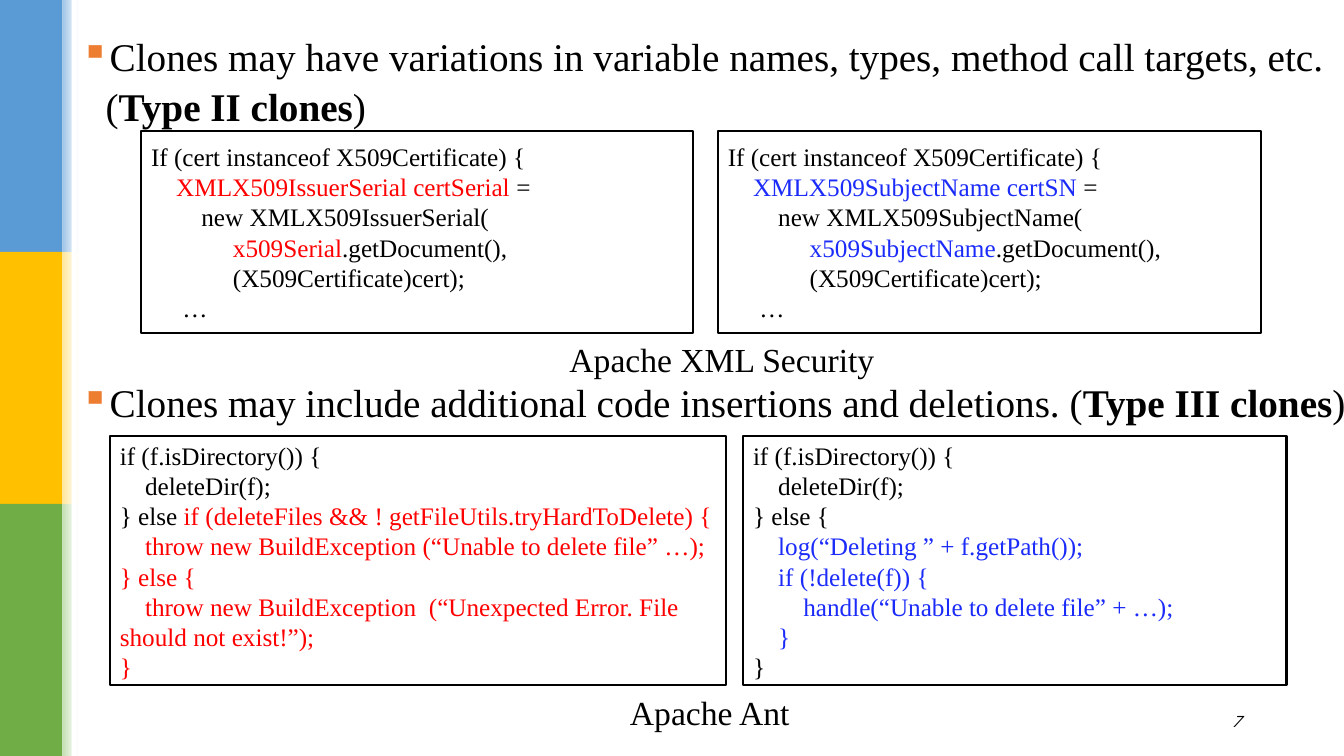
from dataclasses import dataclass

from lxml import etree
from pptx import Presentation
from pptx.dml.color import RGBColor as RGB
from pptx.enum.shapes import MSO_SHAPE as SHAPE
from pptx.enum.text import MSO_ANCHOR as ANCHOR, PP_ALIGN as ALIGN
from pptx.oxml.ns import qn
from pptx.util import Inches, Pt


@dataclass(frozen=True)
class Theme:
    font: str = "Times New Roman"
    number_font: str = "League Spartan"
    black: str = "000000"
    white: str = "FFFFFF"
    red: str = "FF0000"
    blue: str = "1B2BF9"
    bullet: str = "ED7D31"
    # Solid colour and its lighter edge, from top to bottom
    bands: tuple = (("5B9BD5", "9DC3E6"), ("FFC000", "FFE699"),
                    ("70AD47", "C5E0B4"))
    point_size: int = 28
    caption_size: int = 24
    code_size: int = 18
    number_size: int = 12


T = Theme()
RED, BLUE = T.red, T.blue

# Each code line is a list of runs: plain text, or (text, colour)
XML_ISSUER = [
    ["If (cert instanceof X509Certificate) {"],
    ["    ", ("XMLX509IssuerSerial certSerial", RED), " ="],
    ["        new XMLX509IssuerSerial("],
    ["             ", ("x509Serial", RED), ".getDocument(),"],
    ["             (X509Certificate)cert);"],
    ["     …"],
]
XML_SUBJECT = [
    ["If (cert instanceof X509Certificate) {"],
    ["    ", ("XMLX509SubjectName certSN", BLUE), " ="],
    ["        new XMLX509SubjectName("],
    ["             ", ("x509SubjectName", BLUE), ".getDocument(),"],
    ["             (X509Certificate)cert);"],
    ["     …"],
]
ANT_THROW = [
    ["if (f.isDirectory()) {"],
    ["    deleteDir(f);"],
    ["} else",
     (" if (deleteFiles && ! getFileUtils.tryHardToDelete) {", RED)],
    [("    throw new BuildException (“Unable to delete file” …);", RED)],
    [("} else {", RED)],
    [("    throw new BuildException  (“Unexpected Error. File "
      "should not exist!”);", RED)],
    [("}", RED)],
]
ANT_LOG = [
    ["if (f.isDirectory()) {"],
    ["    deleteDir(f);"],
    ["} else {"],
    ["    ", ("log(“Deleting ” + f.getPath());", BLUE)],
    ["    ", ("if (!delete(f)) {", BLUE)],
    [("        handle(“Unable to delete file” + …);", BLUE)],
    [("    }", BLUE)],
    ["}"],
]


def add_run(p, text, size, color=T.black, bold=False):
    r = p.add_run()
    r.text = text
    r.font.name, r.font.size, r.font.bold = T.font, Pt(size), bold
    r.font.color.rgb = RGB.from_string(color)


def add_rect(slide, x, y, w, h, fill):
    sp = slide.shapes.add_shape(SHAPE.RECTANGLE, Inches(x), Inches(y),
                                Inches(w), Inches(h))
    sp.shadow.inherit = False
    sp.fill.solid()
    sp.fill.fore_color.rgb = RGB.from_string(fill)
    sp.line.fill.background()
    return sp


def add_text_frame(slide, x, y, w, h):
    tf = slide.shapes.add_textbox(Inches(x), Inches(y),
                                  Inches(w), Inches(h)).text_frame
    tf.word_wrap = True
    return tf


def add_side_bands(slide):
    height = 2.5
    for i, (color, edge) in enumerate(T.bands):
        add_rect(slide, 0, i * height, 0.62, height, color)
        fade = add_rect(slide, 0.62, i * height, 0.16, height, edge)
        fade.fill.gradient()
        fade.fill.gradient_angle = 0
        for stop, shade in zip(fade.fill.gradient_stops, (edge, T.white)):
            stop.color.rgb = RGB.from_string(shade)
    add_rect(slide, 0.71, 0, 0.05, 7.5, T.white)


def add_point(slide, y, text, clone_type):
    p = add_text_frame(slide, 0.7, y, 12.92, 1.25).paragraphs[0]
    p.line_spacing = 1.05
    pPr = p._p.get_or_add_pPr()
    pPr.set("marL", str(Inches(0.25)))
    pPr.set("indent", str(-Inches(0.25)))
    color = etree.SubElement(pPr, qn("a:buClr"))
    etree.SubElement(color, qn("a:srgbClr"), val=T.bullet)
    etree.SubElement(pPr, qn("a:buChar"), char="▪")
    add_run(p, text + " (", T.point_size)
    add_run(p, clone_type, T.point_size, bold=True)
    add_run(p, ")", T.point_size)


def add_code_box(slide, x, y, w, h, lines):
    sp = add_rect(slide, x, y, w, h, T.white)
    sp.line.color.rgb = RGB.from_string(T.black)
    sp.line.width = Pt(1.5)
    tf = sp.text_frame
    tf.word_wrap = True
    tf.vertical_anchor = ANCHOR.MIDDLE
    for i, line in enumerate(lines):
        p = tf.add_paragraph() if i else tf.paragraphs[0]
        p.alignment = ALIGN.LEFT
        for part in line:
            text, color = (part, T.black) if isinstance(part, str) else part
            add_run(p, text, T.code_size, color)


def add_caption(slide, x, y, w, text):
    p = add_text_frame(slide, x, y, w, 0.5).paragraphs[0]
    add_run(p, text, T.caption_size)


def add_slide_number(slide, number):
    tf = add_text_frame(slide, 8.83, 6.95, 3.58, 0.4)
    tf.vertical_anchor = ANCHOR.MIDDLE
    p = tf.paragraphs[0]
    p.alignment = ALIGN.RIGHT
    r = p.add_run()
    r.text = number
    r.font.name, r.font.size = T.number_font, Pt(T.number_size)
    r.font.italic = True
    r.font.color.rgb = RGB.from_string(T.black)


def main():
    prs = Presentation()
    prs.slide_width, prs.slide_height = Inches(13.33), Inches(7.5)
    slide = prs.slides.add_slide(prs.slide_layouts[6])
    add_side_bands(slide)

    # Type II clones
    add_point(slide, 0.25, "Clones may have variations in variable names, "
              "types, method call targets, etc.", "Type II clones")
    add_code_box(slide, 1.4, 1.3, 5.47, 2, XML_ISSUER)
    add_code_box(slide, 7.12, 1.3, 5.39, 2, XML_SUBJECT)
    add_caption(slide, 5.55, 3.31, 3.43, "Apache XML Security")

    # Type III clones
    add_point(slide, 3.68, "Clones may include additional code insertions "
              "and deletions.", "Type III clones")
    add_code_box(slide, 1.09, 4.33, 6.11, 2.47, ANT_THROW)
    add_code_box(slide, 7.37, 4.33, 5.39, 2.47, ANT_LOG)
    add_caption(slide, 6.15, 6.82, 1.97, "Apache Ant")

    add_slide_number(slide, "7")
    prs.save("out.pptx")


if __name__ == "__main__":
    main()
